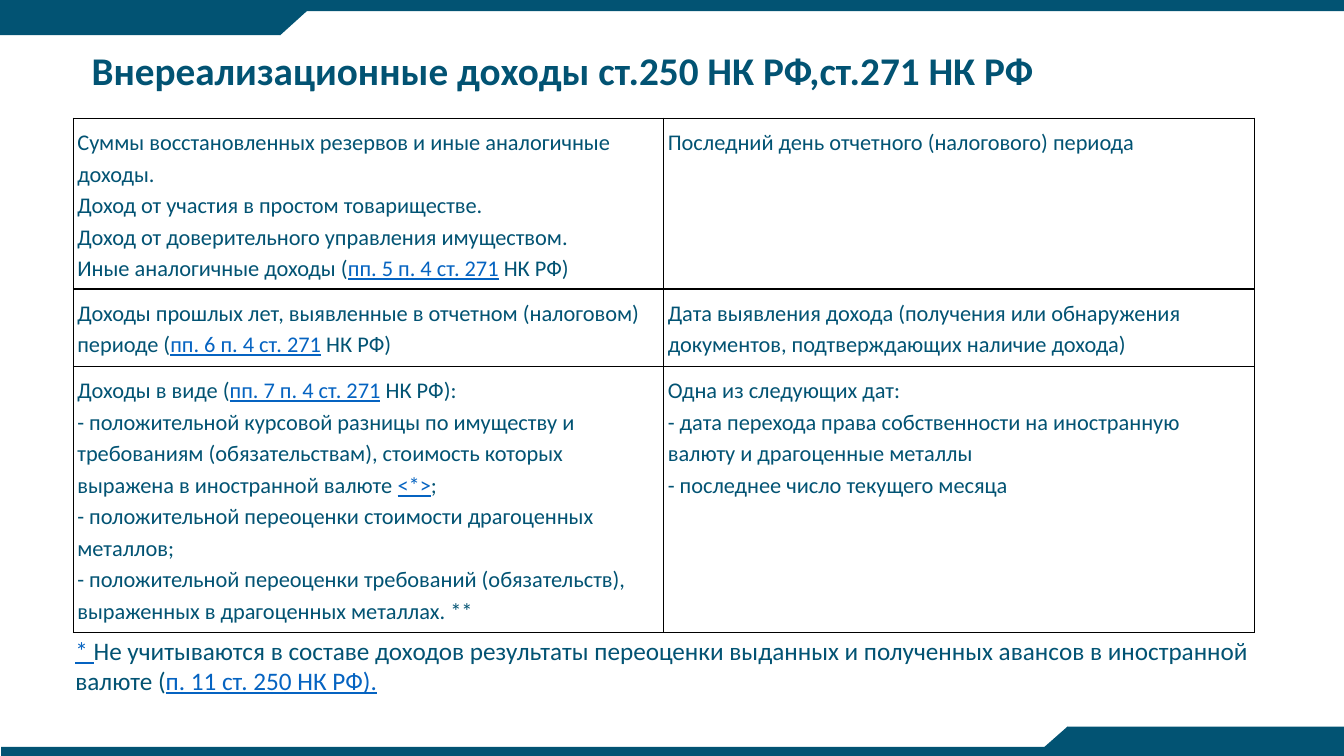
from dataclasses import dataclass

from lxml.etree import SubElement
from pptx import Presentation
from pptx.dml.color import RGBColor
from pptx.enum.shapes import MSO_SHAPE
from pptx.enum.text import MSO_ANCHOR
from pptx.oxml.ns import qn
from pptx.slide import Slide
from pptx.table import _Cell
from pptx.text.text import TextFrame
from pptx.util import Cm, Pt


@dataclass(frozen=True)
class Theme:
    font: str = "Calibri"
    ink: RGBColor = RGBColor(0x02, 0x53, 0x73)
    reference: RGBColor = RGBColor(0x05, 0x63, 0xC1)
    border: str = "000000"
    border_width: Pt = Pt(1)
    title_size: Pt = Pt(28)
    table_size: Pt = Pt(16)
    footnote_size: Pt = Pt(18)


@dataclass(frozen=True)
class Band:
    left: float
    top: float
    width: float
    height: float
    outline: MSO_SHAPE = MSO_SHAPE.RECTANGLE
    rotation: int = 0


@dataclass(frozen=True)
class IncomeRow:
    height: float
    income: list[str]
    recognition_date: list[str]


THEME = Theme()
REFERENCE_MARK = "|"
SLIDE_WIDTH, SLIDE_HEIGHT = 33.87, 19.05

BANDS = [
    Band(0, 0, SLIDE_WIDTH, 0.28),
    Band(0.03, 18.82, 33.84, 0.23),
    Band(0, 0.13, 7.06, 0.76),
    Band(6.22, 0.13, 1.68, 0.76, MSO_SHAPE.FLOWCHART_MERGE),
    Band(26.9, 18.31, 6.97, 0.74),
    Band(26.06, 18.31, 1.68, 0.74, MSO_SHAPE.FLOWCHART_MERGE, 180),
]

TITLE = "Внереализационные доходы ст.250 НК РФ,ст.271 НК РФ"

INCOME_ROWS = [
    IncomeRow(
        4.3,
        [
            "Суммы восстановленных резервов и иные аналогичные доходы.",
            "Доход от участия в простом товариществе.",
            "Доход от доверительного управления имуществом.",
            "Иные аналогичные доходы (|пп. 5 п. 4 ст. 271| НК РФ)",
        ],
        ["Последний день отчетного (налогового) периода"],
    ),
    IncomeRow(
        1.95,
        ["Доходы прошлых лет, выявленные в отчетном (налоговом) периоде "
         "(|пп. 6 п. 4 ст. 271| НК РФ)"],
        ["Дата выявления дохода (получения или обнаружения документов, "
         "подтверждающих наличие дохода)"],
    ),
    IncomeRow(
        6.7,
        [
            "Доходы в виде (|пп. 7 п. 4 ст. 271| НК РФ):",
            "- положительной курсовой разницы по имуществу и требованиям "
            "(обязательствам), стоимость которых выражена в иностранной валюте |<*>|;",
            "- положительной переоценки стоимости драгоценных металлов;",
            "- положительной переоценки требований (обязательств), "
            "выраженных в драгоценных металлах. **",
        ],
        [
            "Одна из следующих дат:",
            "- дата перехода права собственности на иностранную валюту "
            "и драгоценные металлы",
            "- последнее число текущего месяца",
        ],
    ),
]

FOOTNOTE = (
    "|* |Не учитываются в составе доходов результаты переоценки выданных "
    "и полученных авансов в иностранной валюте (|п. 11 ст. 250 НК РФ).|"
)


def draw_band(slide: Slide, band: Band) -> None:
    stripe = slide.shapes.add_shape(
        band.outline, Cm(band.left), Cm(band.top), Cm(band.width), Cm(band.height)
    )
    stripe.rotation = band.rotation
    stripe.shadow.inherit = False
    stripe.fill.solid()
    stripe.fill.fore_color.rgb = THEME.ink
    stripe.line.fill.background()


def write_paragraphs(
    frame: TextFrame, lines: list[str], size: Pt, spacing: float, bold: bool = False
) -> None:
    frame.word_wrap = True
    for index, line in enumerate(lines):
        paragraph = frame.add_paragraph() if index else frame.paragraphs[0]
        paragraph.line_spacing = spacing
        for position, wording in enumerate(line.split(REFERENCE_MARK)):
            if not wording:
                continue
            is_reference = position % 2 == 1
            run = paragraph.add_run()
            run.text = wording
            run.font.name = THEME.font
            run.font.size = size
            run.font.bold = bold
            run.font.underline = is_reference
            run.font.color.rgb = THEME.reference if is_reference else THEME.ink


def draw_borders(cell: _Cell) -> None:
    properties = cell._tc.get_or_add_tcPr()
    for side in ("a:lnL", "a:lnR", "a:lnT", "a:lnB"):
        edge = SubElement(properties, qn(side), w=str(int(THEME.border_width)))
        SubElement(SubElement(edge, qn("a:solidFill")), qn("a:srgbClr"), val=THEME.border)


def fill_cell(cell: _Cell, lines: list[str]) -> None:
    cell.margin_left = cell.margin_right = Cm(0.1)
    cell.margin_top = cell.margin_bottom = Cm(0.18)
    draw_borders(cell)
    cell.fill.background()
    write_paragraphs(cell.text_frame, lines, THEME.table_size, 1.15)


def draw_income_table(slide: Slide) -> None:
    table = slide.shapes.add_table(
        len(INCOME_ROWS), 2, Cm(1.85), Cm(2.98), Cm(29.76),
        Cm(sum(row.height for row in INCOME_ROWS)),
    ).table
    table.first_row = False
    table.horz_banding = False
    for index, row in enumerate(INCOME_ROWS):
        table.rows[index].height = Cm(row.height)
        fill_cell(table.cell(index, 0), row.income)
        fill_cell(table.cell(index, 1), row.recognition_date)


def main() -> None:
    presentation = Presentation()
    presentation.slide_width = Cm(SLIDE_WIDTH)
    presentation.slide_height = Cm(SLIDE_HEIGHT)
    slide = presentation.slides.add_slide(presentation.slide_layouts[6])

    for band in BANDS:
        draw_band(slide, band)

    title = slide.shapes.add_textbox(Cm(2.06), Cm(0), Cm(29.21), Cm(3.68))
    title.text_frame.vertical_anchor = MSO_ANCHOR.MIDDLE
    write_paragraphs(title.text_frame, [TITLE], THEME.title_size, 0.9, bold=True)

    draw_income_table(slide)

    footnote = slide.shapes.add_textbox(Cm(1.65), Cm(15.88), Cm(30.18), Cm(1.8))
    write_paragraphs(footnote.text_frame, [FOOTNOTE], THEME.footnote_size, 1.0)

    presentation.save("out.pptx")


if __name__ == "__main__":
    main()
